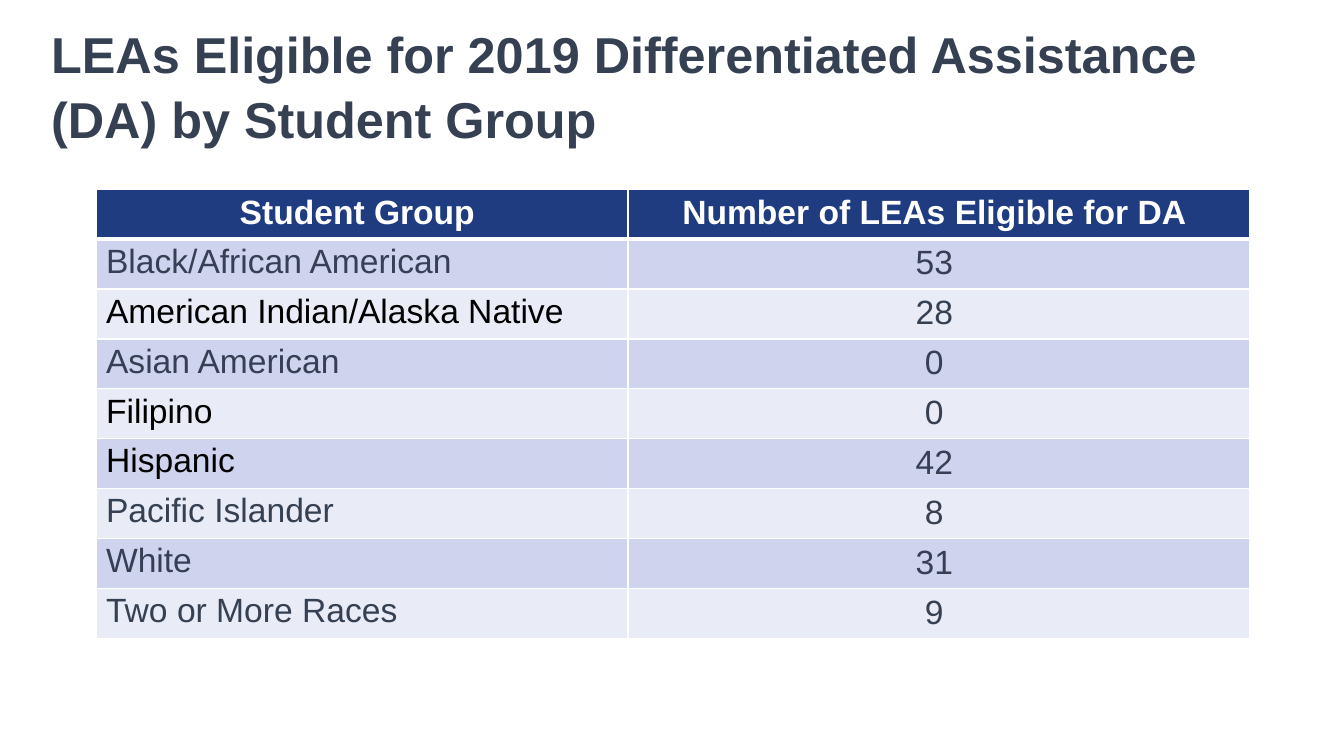
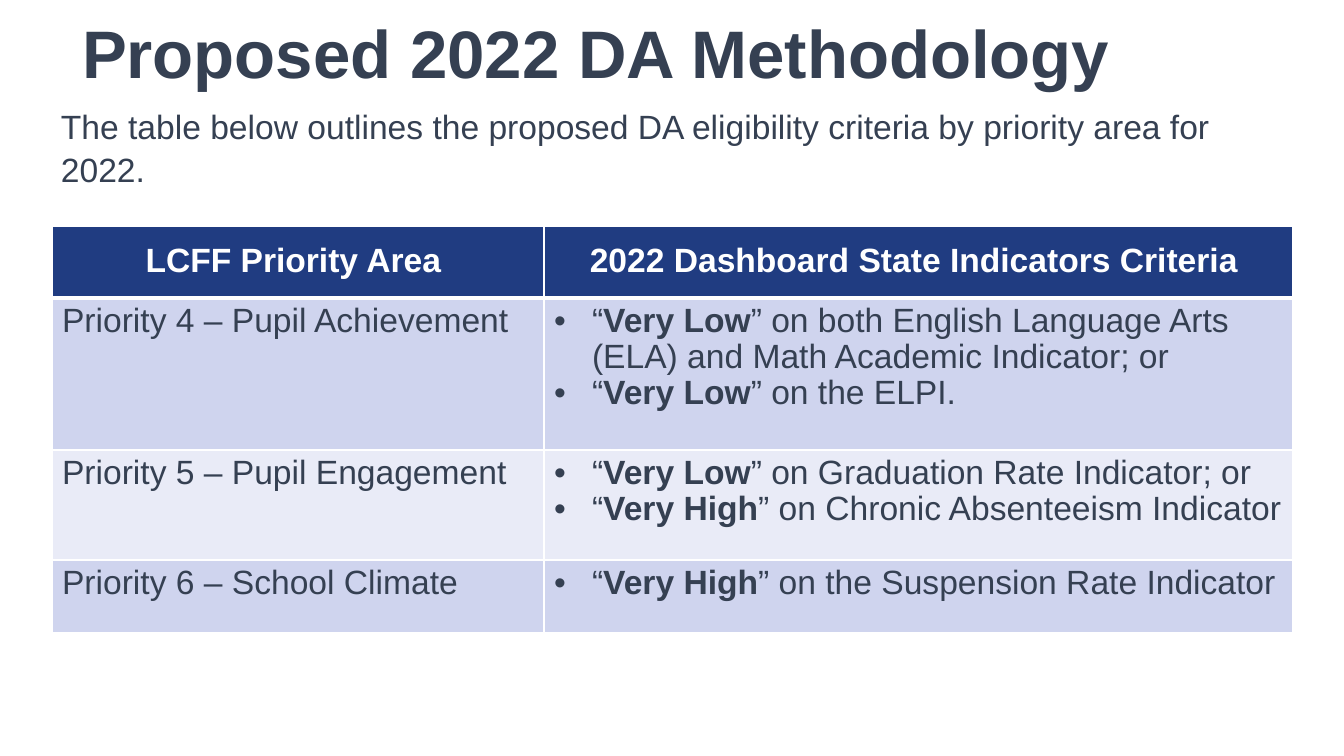
from dataclasses import dataclass
from typing import Any

from lxml.etree import SubElement
from pptx import Presentation
from pptx.dml.color import RGBColor
from pptx.enum.text import MSO_ANCHOR, MSO_AUTO_SIZE, PP_ALIGN
from pptx.oxml.ns import qn
from pptx.util import Emu, Pt

FONT = "Arial"
INK = "354052"
BLACK = "000000"
WHITE = "FFFFFF"
HEADER_FILL = "203C81"
BAND_FILLS = ("CFD4EE", "E9EBF7")
BODY_SIZE = 24
PROSE_SPACING = 1.07
CELL_SPACING = 0.97
BULLET_INDENT = 38
NO_BREAK_SPACE = chr(160)


@dataclass(frozen=True)
class Frame:
    """A rectangle in px."""

    left: int
    top: int
    width: int
    height: int


@dataclass(frozen=True)
class GroupCount:
    """A student group and its number of eligible LEAs."""

    group: str
    count: int
    color: str = INK


@dataclass(frozen=True)
class Criterion:
    """A performance level and the indicator it applies to."""

    level: str
    scope: str


@dataclass(frozen=True)
class Priority:
    """A priority area with its criteria."""

    area: str
    criteria: tuple[Criterion, ...]


GROUPS = (
    GroupCount("Black/African American", 53),
    GroupCount("American Indian/Alaska Native", 28, BLACK),
    GroupCount("Asian American", 0),
    GroupCount("Filipino", 0, BLACK),
    GroupCount("Hispanic", 42, BLACK),
    GroupCount("Pacific Islander", 8),
    GroupCount("White", 31),
    GroupCount("Two or More Races", 9),
)
PRIORITIES = (
    Priority("Priority 4 – Pupil Achievement", (
        Criterion("Very Low", "on both English Language Arts (ELA) and Math Academic Indicator; or"),
        Criterion("Very Low", "on the ELPI."),
    )),
    Priority("Priority 5 – Pupil Engagement", (
        Criterion("Very Low", "on Graduation Rate Indicator; or"),
        Criterion("Very High", "on Chronic Absenteeism Indicator"),
    )),
    Priority("Priority 6 – School Climate", (
        Criterion("Very High", "on the Suspension Rate Indicator"),
    )),
)


def px(length: int) -> Emu:
    """Turn px into EMU."""
    return Emu(round(length * 914400 / 100.8))


def rgb(color: str) -> RGBColor:
    """Turn a hex string into a colour."""
    return RGBColor.from_string(color)


def add_span(para: Any, text: str, *, size: int = BODY_SIZE, color: str = INK, bold: bool = False) -> None:
    """Add formatted text to a paragraph."""
    span = para.add_run()
    span.text = text
    span.font.name = FONT
    span.font.size = Pt(size)
    span.font.bold = bold
    span.font.color.rgb = rgb(color)


def place(shape: Any, frame: Frame) -> None:
    """Move and size a shape."""
    shape.left, shape.top = px(frame.left), px(frame.top)
    shape.width, shape.height = px(frame.width), px(frame.height)


def add_page(deck: Any, title: str, frame: Frame, size: int) -> Any:
    """Add a page with its title."""
    page = deck.slides.add_slide(deck.slide_layouts[5])
    place(page.shapes.title, frame)
    box = page.shapes.title.text_frame
    box.word_wrap = True
    box.auto_size = MSO_AUTO_SIZE.NONE
    box.vertical_anchor = MSO_ANCHOR.MIDDLE
    para = box.paragraphs[0]
    para.alignment = PP_ALIGN.LEFT
    para.line_spacing = PROSE_SPACING
    add_span(para, title, size=size, bold=True)
    return page


def style_cell(cell: Any, fill: str, bottom_width: int = 1) -> None:
    """Give a cell white borders and a fill."""
    properties = cell._tc.get_or_add_tcPr()
    for side, width in (("L", 1), ("R", 1), ("T", 1), ("B", bottom_width)):
        line = SubElement(properties, qn(f"a:ln{side}"), w=str(Pt(width)))
        SubElement(SubElement(line, qn("a:solidFill")), qn("a:srgbClr"), val=WHITE)
    cell.fill.solid()
    cell.fill.fore_color.rgb = rgb(fill)


def fill_cell(cell: Any, text: str, *, centered: bool = False, color: str = INK, bold: bool = False) -> None:
    """Write one line of text into a cell."""
    para = cell.text_frame.paragraphs[0]
    para.line_spacing = CELL_SPACING
    if centered:
        para.alignment = PP_ALIGN.CENTER
        cell.vertical_anchor = MSO_ANCHOR.MIDDLE
    add_span(para, text + NO_BREAK_SPACE, color=color, bold=bold)


def fill_criteria(cell: Any, criteria: tuple[Criterion, ...]) -> None:
    """Write criteria as bullets into a cell."""
    box = cell.text_frame
    for index, criterion in enumerate(criteria):
        para = box.add_paragraph() if index else box.paragraphs[0]
        para.line_spacing = CELL_SPACING
        properties = para._p.get_or_add_pPr()
        properties.set("marL", str(px(BULLET_INDENT)))
        properties.set("indent", str(-px(BULLET_INDENT)))
        SubElement(properties, qn("a:buFont"), typeface=FONT)
        SubElement(properties, qn("a:buChar"), char="•")
        add_span(para, "“")
        add_span(para, criterion.level, bold=True)
        add_span(para, f"” {criterion.scope}")


def add_grid(page: Any, left: int, top: int, widths: tuple[int, ...],
             heights: tuple[int, ...], headers: tuple[str, ...]) -> Any:
    """Add a banded table with its header row."""
    table = page.shapes.add_table(len(heights), len(widths), px(left), px(top),
                                  px(sum(widths)), px(sum(heights))).table
    for column, width in zip(table.columns, widths):
        column.width = px(width)
    for index, (row, height) in enumerate(zip(table.rows, heights)):
        row.height = px(height)
        for cell in row.cells:
            if index:
                style_cell(cell, BAND_FILLS[(index - 1) % 2])
            else:
                style_cell(cell, HEADER_FILL, bottom_width=3)
    for cell, header in zip(table.rows[0].cells, headers):
        fill_cell(cell, header, centered=True, color=WHITE, bold=True)
    return table


def build_groups_page(deck: Any) -> None:
    """Build the page of LEAs by student group."""
    page = add_page(deck, "LEAs Eligible for 2019 Differentiated Assistance (DA) by Student Group",
                    Frame(41, 52, 1263, 63), 36)
    table = add_grid(page, 96, 189, (532, 622), (50,) * (len(GROUPS) + 1),
                     ("Student Group", "Number of LEAs Eligible for DA"))
    for row, entry in enumerate(GROUPS, start=1):
        fill_cell(table.cell(row, 0), entry.group, color=entry.color)
        fill_cell(table.cell(row, 1), str(entry.count), centered=True)


def build_methodology_page(deck: Any) -> None:
    """Build the page of proposed criteria."""
    page = add_page(deck, "Proposed 2022 DA Methodology", Frame(72, 0, 1070, 97), 48)
    box = page.shapes.add_textbox(px(41), px(98), px(1242), px(97)).text_frame
    box.word_wrap = True
    box.margin_left = px(20)
    para = box.paragraphs[0]
    para.line_spacing = PROSE_SPACING
    add_span(para, "The table below outlines the proposed DA eligibility criteria by priority area for 2022.")
    table = add_grid(page, 52, 226, (492, 749), (72, 152, 110, 73),
                     ("LCFF Priority Area", "2022 Dashboard State Indicators Criteria"))
    for row, priority in enumerate(PRIORITIES, start=1):
        fill_cell(table.cell(row, 0), priority.area)
        fill_criteria(table.cell(row, 1), priority.criteria)


def main() -> None:
    """Build and save the deck."""
    deck = Presentation()
    deck.slide_width, deck.slide_height = px(1344), px(756)
    build_groups_page(deck)
    build_methodology_page(deck)
    deck.save("out.pptx")


if __name__ == "__main__":
    main()
